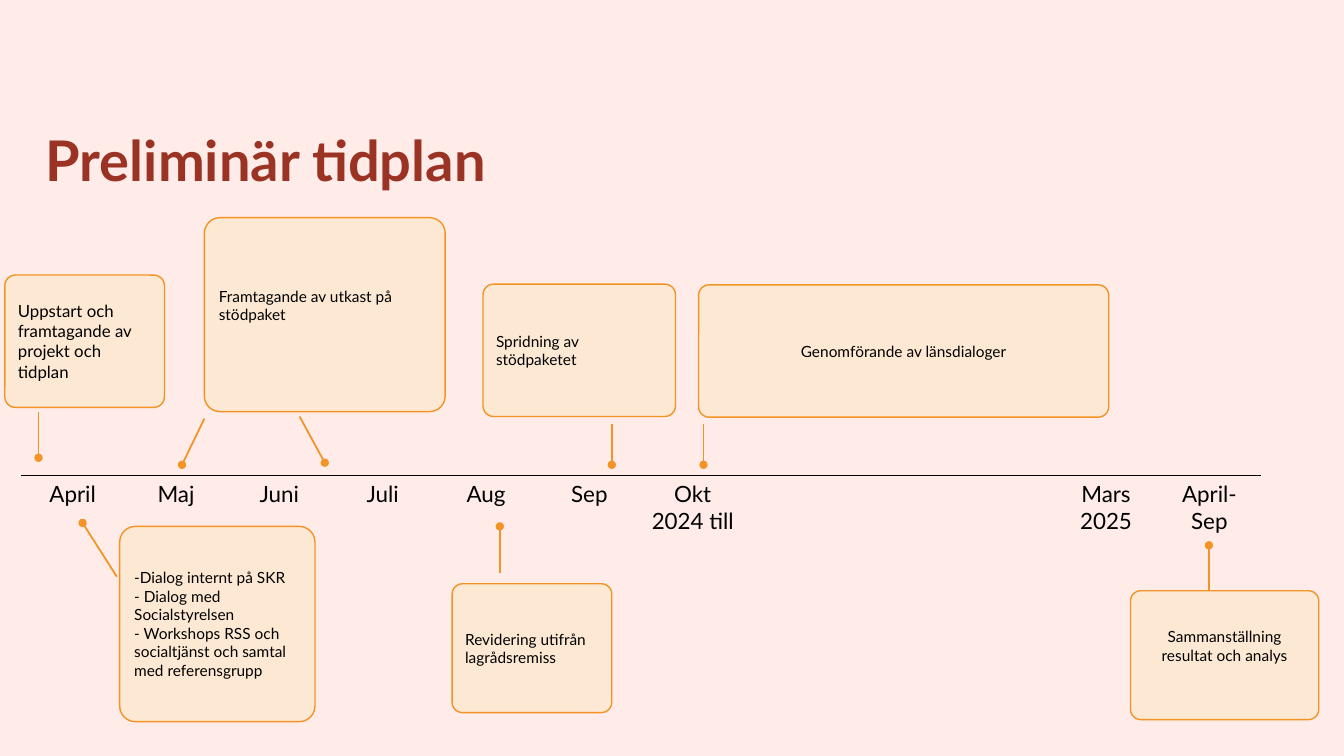
import pptx
import pptx.dml.color
import pptx.enum.shapes
import pptx.enum.text
import pptx.oxml
import pptx.oxml.ns
import pptx.util
from lxml import etree

Pt = pptx.util.Pt
RGBColor = pptx.dml.color.RGBColor
Align = pptx.enum.text.PP_ALIGN
Anchor = pptx.enum.text.MSO_ANCHOR
qn = pptx.oxml.ns.qn

PINK = RGBColor(0xFF, 0xEB, 0xE8)
RED = RGBColor(0x9A, 0x33, 0x24)
CREAM = RGBColor(0xFD, 0xE9, 0xD3)
ORANGE = RGBColor(0xF3, 0x93, 0x25)
BLACK = RGBColor(0, 0, 0)


def set_values(target, values):
    for name, value in values.items():
        setattr(target, name, value)


def format_paragraph(paragraph, text, size, alignment, color=BLACK, bold=False):
    paragraph.text = text
    paragraph.alignment = alignment
    set_values(paragraph.font, {"name": "Lato", "size": Pt(size), "bold": bold})
    paragraph.font.color.rgb = color


presentation = pptx.Presentation()
set_values(presentation, {"slide_width": Pt(960), "slide_height": Pt(540)})
slide = presentation.slides.add_slide(presentation.slide_layouts[5])
slide.background.fill.solid()
slide.background.fill.fore_color.rgb = PINK

title = slide.shapes.title
set_values(title, {"left": Pt(25.5), "top": Pt(91.5), "width": Pt(600.5), "height": Pt(104.5)})
set_values(title.text_frame, {
    "vertical_anchor": Anchor.TOP,
    "word_wrap": True,
    "auto_size": pptx.enum.text.MSO_AUTO_SIZE.NONE,
})
format_paragraph(title.text_frame.paragraphs[0], "Preliminär tidplan", 40, Align.LEFT, RED, True)
title.text_frame.paragraphs[0].line_spacing = 0.9

months = ["April", "Maj", "Juni", "Juli", "Aug", "Sep", "Okt 2024 till",
          "", "", "", "Mars 2025", "April- Sep"]
table_frame = slide.shapes.add_table(1, len(months), Pt(15), Pt(339.5), Pt(886), Pt(54))
table = table_frame.table
set_values(table, {"first_row": False, "horz_banding": False})
style = table_frame._element.find(".//" + qn("a:tableStyleId"))
style.text = "{2D5ABB26-0587-4C30-8999-92F81FD0307C}"
for column, month in enumerate(months):
    table.columns[column].width = Pt(886 / len(months))
    cell = table.cell(0, column)
    cell.fill.background()
    format_paragraph(cell.text_frame.paragraphs[0], month, 16, Align.CENTER)
    border = etree.Element(qn("a:lnT"), w=str(Pt(0.25)))
    border_fill = etree.SubElement(border, qn("a:solidFill"))
    etree.SubElement(border_fill, qn("a:srgbClr"), val=str(BLACK))
    cell._tc.get_or_add_tcPr().insert(0, border)

activities = [
    (3.5, 196.5, 114, 94.5, 12, Align.LEFT, 3.6,
     ["Uppstart och framtagande av projekt och tidplan"]),
    (146, 155.5, 172, 138.5, 11, Align.LEFT, 16.8, ["Framtagande av utkast på stödpaket"]),
    (345, 203, 137.5, 94.5, 11, Align.LEFT, 3.6, ["Spridning av stödpaketet"]),
    (499, 203.5, 293, 94.5, 11, Align.CENTER, 3.6, ["Genomförande av länsdialoger"]),
    (85.5, 376, 139.5, 139.5, 11, Align.LEFT, 3.6,
     ["-Dialog internt på SKR", "- Dialog med Socialstyrelsen",
      "- Workshops RSS och socialtjänst och samtal med referensgrupp"]),
    (323, 417, 114, 92, 11, Align.LEFT, 3.6, ["Revidering utifrån lagrådsremiss"]),
    (807.5, 422, 134.5, 92, 11, Align.CENTER, 16.8, ["Sammanställning resultat och analys"]),
]
for left, top, width, height, size, alignment, bottom, lines in activities:
    shape = slide.shapes.add_shape(pptx.enum.shapes.MSO_SHAPE.ROUNDED_RECTANGLE,
                                   Pt(left), Pt(top), Pt(width), Pt(height))
    shape.adjustments[0] = 0.08
    shape.shadow.inherit = False
    shape.fill.solid()
    shape.fill.fore_color.rgb = CREAM
    shape.line.color.rgb = ORANGE
    shape.line.width = Pt(1)
    text_frame = shape.text_frame
    set_values(text_frame, {
        "word_wrap": True,
        "vertical_anchor": Anchor.MIDDLE,
        "margin_bottom": Pt(bottom),
    })
    for index, line in enumerate(lines):
        paragraph = text_frame.add_paragraph() if index else text_frame.paragraphs[0]
        format_paragraph(paragraph, line, size, alignment)

pointers = [
    (27.5, 294, 27.5, 327),
    (146, 299, 130, 332),
    (214, 297.5, 232, 330.5),
    (437, 303, 437, 332),
    (502.5, 303, 502.5, 332),
    (83.5, 412, 59, 373.5),
    (357, 409, 357, 376),
    (863.5, 422, 863.5, 389.5),
]
for ends in pointers:
    connector = slide.shapes.add_connector(pptx.enum.shapes.MSO_CONNECTOR.STRAIGHT,
                                           *[Pt(end) for end in ends])
    connector.line.color.rgb = ORANGE
    connector.line.width = Pt(1.25)
    etree.SubElement(connector.line._get_or_add_ln(), qn("a:tailEnd"), type="oval")
    etree.SubElement(connector._element.spPr, qn("a:effectLst"))

presentation.save("out.pptx")
